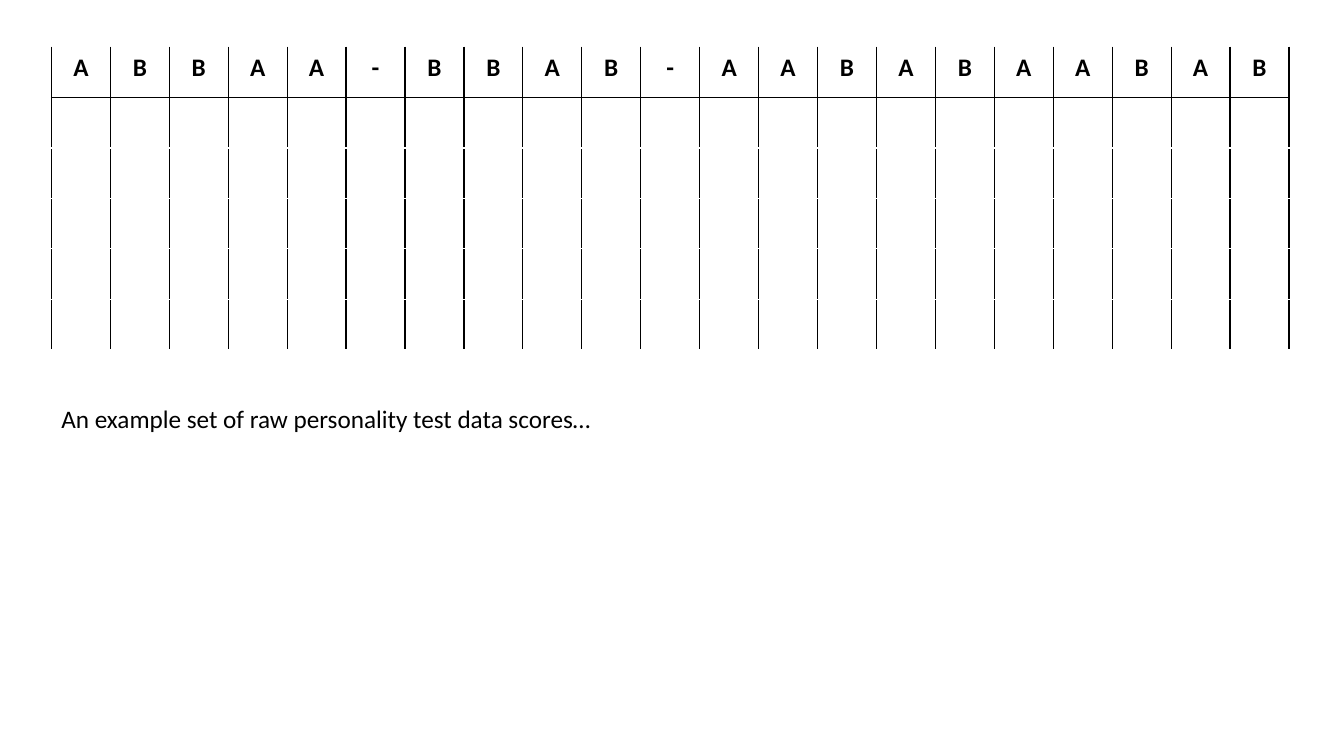
"""Build a slide with a table of raw personality test scores and a caption."""
from lxml import etree
from pptx import Presentation
from pptx.dml.color import RGBColor
from pptx.enum.text import MSO_AUTO_SIZE, PP_ALIGN
from pptx.oxml.ns import qn
from pptx.util import Pt

ANSWERS = "ABBAA-BBAB-AABABAABAB"
CAPTION = "An example set of raw personality test data scores…"
ROWS = 6
C = {"ink": "000000", "paper": "FFFFFF"}
FONT = "Calibri"
PX = 9525
SLIDE = (1280, 720)
TABLE = (49, 45, 1179, 288)
CAPTION_BOX = (49, 379, 679, 68)
CENTER, LEFT = PP_ALIGN.CENTER, PP_ALIGN.LEFT
GROW = MSO_AUTO_SIZE.SHAPE_TO_FIT_TEXT


def emu(box):
    return [v * PX for v in box]


def write(tf, text, size=18, bold=False, align=LEFT, color="ink"):
    p = tf.paragraphs[0]
    p.alignment = align
    r = p.add_run()
    r.text = text
    r.font.name, r.font.size, r.font.bold = FONT, Pt(size), bold
    r.font.color.rgb = RGBColor.from_string(C[color])


def border(cell, side, color, width=1):
    ln = etree.SubElement(cell._tc.get_or_add_tcPr(), qn(f"a:ln{side}"), w=str(Pt(width)))
    fill = etree.SubElement(ln, qn("a:solidFill"))
    etree.SubElement(fill, qn("a:srgbClr"), val=C[color])


def add_scores(s):
    x, y, w, h = emu(TABLE)
    table = s.shapes.add_table(ROWS, len(ANSWERS), x, y, w, h).table
    table.first_row = table.horz_banding = False
    for col in table.columns:
        col.width = w // len(ANSWERS)
    for row in range(ROWS):
        table.rows[row].height = h // ROWS
        for col, answer in enumerate(ANSWERS):
            cell = table.cell(row, col)
            border(cell, "L", "ink")
            border(cell, "R", "ink")
            border(cell, "T", "ink" if row == 1 else "paper")
            border(cell, "B", "ink" if row == 0 else "paper")
            cell.fill.solid()
            cell.fill.fore_color.rgb = RGBColor.from_string(C["paper"])
            if row == 0:
                write(cell.text_frame, answer, bold=True, align=CENTER)


def add_caption(s):
    tf = s.shapes.add_textbox(*emu(CAPTION_BOX)).text_frame
    tf.word_wrap = True
    tf.auto_size = GROW
    write(tf, CAPTION)


def main():
    prs = Presentation()
    prs.slide_width, prs.slide_height = emu(SLIDE)
    s = prs.slides.add_slide(prs.slide_layouts[6])
    add_scores(s)
    add_caption(s)
    prs.save("out.pptx")


if __name__ == "__main__":
    main()
